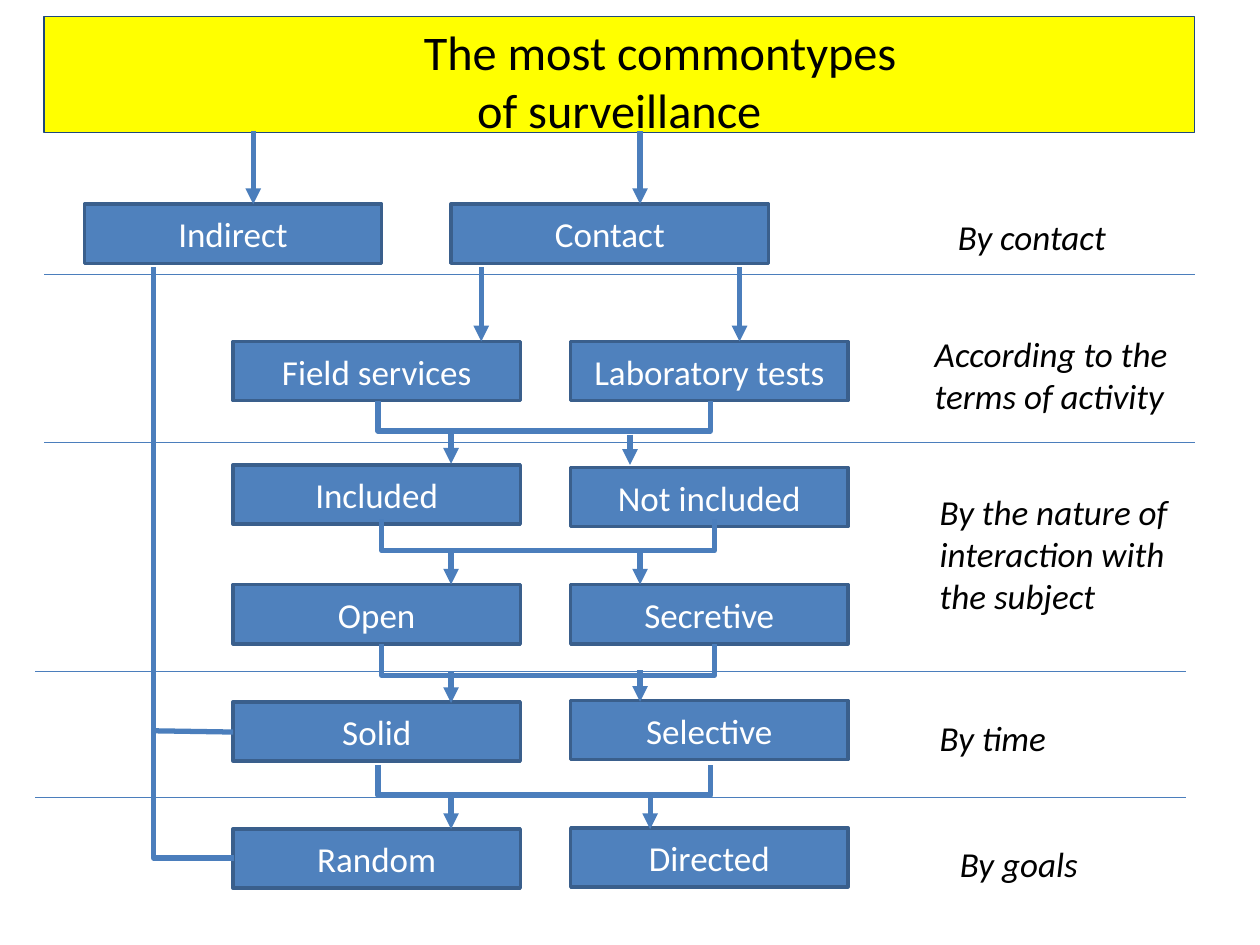
from pptx import Presentation
from pptx.dml.color import RGBColor
from pptx.enum.shapes import MSO_CONNECTOR, MSO_SHAPE
from pptx.enum.text import MSO_ANCHOR, MSO_AUTO_SIZE, PP_ALIGN
from pptx.oxml.ns import qn
from pptx.util import Inches, Pt
from lxml import etree

RECT = MSO_SHAPE.RECTANGLE
STRAIGHT = MSO_CONNECTOR.STRAIGHT
TOP, MIDDLE = MSO_ANCHOR.TOP, MSO_ANCHOR.MIDDLE
LEFT, CENTER = PP_ALIGN.LEFT, PP_ALIGN.CENTER
GROW = MSO_AUTO_SIZE.SHAPE_TO_FIT_TEXT

YELLOW = RGBColor(0xFF, 0xFF, 0x00)
NAVY = RGBColor(0x1F, 0x49, 0x7D)
BLUE = RGBColor(0x4F, 0x81, 0xBD)
EDGE = RGBColor(0x3A, 0x5F, 0x8C)
WIRE = RGBColor(0x4B, 0x7E, 0xBC)
BLACK = RGBColor(0, 0, 0)
WHITE = RGBColor(0xFF, 0xFF, 0xFF)

COLS, ROWS = 100, 75


class Chart:
    """Style and slide; all lengths are columns and rows of the grid."""

    font = "Calibri"
    size = 20
    thick, thin = 3, 0.75

    def __init__(self, deck):
        self.slide = deck.slides.add_slide(deck.slide_layouts[6])
        self.shapes = self.slide.shapes
        self.col = deck.slide_width / COLS
        self.row = deck.slide_height / ROWS

    def at(self, *spans):
        units = (self.col, self.row) * (len(spans) // 2)
        return [round(span * unit) for span, unit in zip(spans, units)]

    def letter(self, shape, lines, color, size=size, align=CENTER,
               anchor=MIDDLE, italic=False):
        frame = shape.text_frame
        frame.word_wrap = True
        frame.vertical_anchor = anchor
        frame.text = "\n".join(lines)
        for para in frame.paragraphs:
            para.alignment = align
            font = para.font
            font.name, font.size, font.italic = self.font, Pt(size), italic
            font.color.rgb = color
        return frame

    def box(self, spans, lines, fill=BLUE, edge=EDGE, width=2,
            color=WHITE, **style):
        shape = self.shapes.add_shape(RECT, *self.at(*spans))
        shape.shadow.inherit = False
        shape.fill.solid()
        shape.fill.fore_color.rgb = fill
        shape.line.color.rgb = edge
        shape.line.width = Pt(width)
        return self.letter(shape, lines, color, **style)

    def label(self, spans, text, align=LEFT):
        shape = self.shapes.add_textbox(*self.at(*spans))
        frame = self.letter(shape, [text], BLACK, align=align, anchor=TOP,
                            italic=True)
        frame.auto_size = GROW

    def line(self, start, end, width=thick, arrow=False):
        wire = self.shapes.add_connector(STRAIGHT, *self.at(*start, *end))
        wire.line.color.rgb = WIRE
        wire.line.width = Pt(width)
        props = wire._element.spPr
        etree.SubElement(props, qn("a:effectLst"))
        if arrow:
            etree.SubElement(props.find(qn("a:ln")), qn("a:tailEnd"),
                             type="triangle")

    def arrow(self, x, top, end):
        self.line((x, top), (x, end), arrow=True)

    def bend(self, *points):
        start, *rest = [self.at(*point) for point in points]
        pen = self.shapes.build_freeform(*start)
        pen.add_line_segments(rest, close=False)
        shape = pen.convert_to_shape()
        shape.shadow.inherit = False
        shape.fill.background()
        shape.line.color.rgb = WIRE
        shape.line.width = Pt(self.thick)


def main():
    deck = Presentation()
    deck.slide_width, deck.slide_height = Inches(10), Inches(7.5)
    chart = Chart(deck)

    # Title, with its first line set in from the left
    title = chart.box((3.5, 1.3, 91.3, 9.2),
                      ["The most commontypes", "of surveillance"],
                      fill=YELLOW, edge=NAVY, width=chart.thin, color=BLACK,
                      size=27.6, anchor=TOP)
    first = title.paragraphs[0]._p.get_or_add_pPr()
    first.set("marL", str(Inches(0.65)))

    # Rules between the groups: left end, height
    for x, y in ((3.5, 21.8), (3.5, 35.1), (2.8, 53.3), (2.8, 63.3)):
        chart.line((x, y), (x + 91.35, y), chart.thin)

    # Top pair of boxes
    tall = 4.7
    chart.box((6.7, 16.2, 23.6, tall), ["Indirect"])
    chart.box((35.8, 16.2, 25.2, tall), ["Contact"])

    # Pairs below: names and the top of each box
    pairs = (("Field services", 27.1, "Laboratory tests", 27.1),
             ("Included", 36.9, "Not included", 37.1),
             ("Open", 46.4, "Secretive", 46.4),
             ("Solid", 55.7, "Selective", 55.6),
             ("Random", 65.8, "Directed", 65.7))
    for left, ltop, right, rtop in pairs:
        chart.box((18.5, ltop, 22.8, tall), [left])
        chart.box((45.3, rtop, 22, tall), [right])

    # Brackets that join each pair: left end, top, foot
    for x, top, foot in ((30, 31.8, 34.2), (30.3, 41.2, 43.7),
                         (30.3, 51.1, 53.6), (30, 60.7, 63.1)):
        chart.bend((x, top), (x, foot), (x + 26.4, foot), (x + 26.4, top))

    # Arrows into the boxes: column, start, end
    for x, top, end in ((20.1, 10.4, 16.2), (50.8, 10.4, 16.2),
                        (38.2, 21.2, 27.1), (58.7, 21.2, 27.1),
                        (35.8, 34.4, 36.8), (50, 34.5, 36.9),
                        (35.8, 43.9, 46.4), (50.8, 43.9, 46.4),
                        (35.8, 53.3, 55.8), (50.8, 53.2, 55.7),
                        (35.8, 63.3, 65.8), (51.6, 63.3, 65.8)):
        chart.arrow(x, top, end)

    # Trunk from Indirect to Random, with a branch to Solid
    trunk = 12.2
    chart.bend((trunk, 21.2), (trunk, 68.1), (18.6, 68.1))
    chart.line((18.5, 58.1), (trunk, 58))

    # Names of the groups
    chart.label((68.9, 16.6, 26, 4.4), "By contact", CENTER)
    for spans, text in (
            ((73.2, 25.9, 20.5, 7.7), "According to the terms of activity"),
            ((73.6, 38.4, 21.3, 11.1),
             "By the nature of interaction with the subject"),
            ((73.6, 56.4, 17.7, 4.4), "By time"),
            ((75.2, 66.4, 13.4, 4.4), "By goals")):
        chart.label(spans, text)

    deck.save("out.pptx")


if __name__ == "__main__":
    main()
